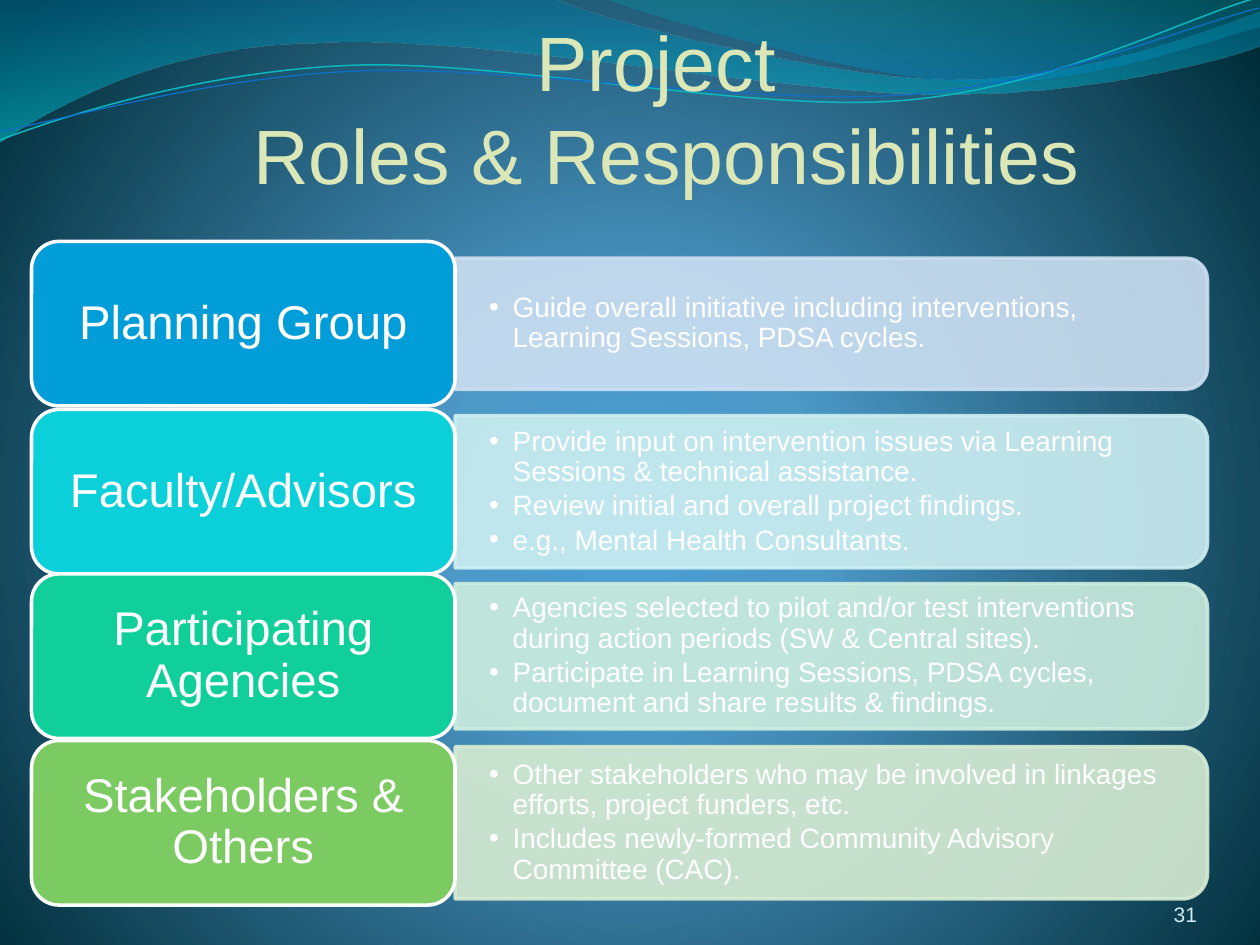
"""Build the project roles and responsibilities slide."""
from math import cos, radians, sin

from pptx import Presentation
from pptx.dml.color import RGBColor
from pptx.enum.shapes import MSO_SHAPE
from pptx.enum.text import MSO_ANCHOR, PP_ALIGN
from pptx.oxml import parse_xml
from pptx.oxml.ns import nsdecls, qn
from pptx.util import Pt

WHITE = RGBColor(0xFF, 0xFF, 0xFF)
CREAM = RGBColor(0xDB, 0xE7, 0xB6)
PALE = RGBColor(0xD1, 0xEA, 0xEE)
BLUE = RGBColor(0x00, 0x9D, 0xD9)
CYAN = RGBColor(0x0B, 0xD0, 0xD9)
GREEN = RGBColor(0x10, 0xCF, 0x9B)
LIME = RGBColor(0x7C, 0xCA, 0x62)
BLUE_TINT = RGBColor(0xCC, 0xDF, 0xF1)
CYAN_TINT = RGBColor(0xCC, 0xEE, 0xF1)
GREEN_TINT = RGBColor(0xCC, 0xED, 0xDE)
LIME_TINT = RGBColor(0xD7, 0xEC, 0xD3)
NAVY = RGBColor(0x00, 0x74, 0xA1)
AQUA = RGBColor(0x00, 0xC6, 0xCF)
TEAL = RGBColor(0x00, 0xA1, 0xA9)
AZURE = RGBColor(0x00, 0x8B, 0xBF)
LINE_AQUA = RGBColor(0x0A, 0xB8, 0xBF)
LINE_BLUE = RGBColor(0x0F, 0x6F, 0xC6)
GLOW = RGBColor(0x4A, 0xA0, 0xD6)
MID = RGBColor(0x4C, 0x98, 0xC7)
DARK = RGBColor(0x00, 0x2C, 0x38)
TILT = 2.7


def fade(shape, levels):
    """Set the opacity, in percent, of each colour in turn."""
    for color, level in zip(shape.element.iter(qn("a:srgbClr")), levels):
        alpha = color.makeelement(qn("a:alpha"), {"val": str(level * 1000)})
        color.append(alpha)


def draw(shapes, start, parts, close):
    """Draw an outline of lines (2 numbers) and cubic curves (6), in points."""
    dots = [(Pt(part[i]), Pt(part[i + 1]))
            for part in parts for i in range(0, len(part), 2)]
    pen = shapes.build_freeform(Pt(start[0]), Pt(start[1]))
    pen.add_line_segments(dots, close=close)
    shape = pen.convert_to_shape()
    shape.shadow.inherit = False
    steps = iter(list(shape.element.iter(qn("a:lnTo"))))
    for part in parts:
        first = next(steps)
        if len(part) == 6:
            first.tag = qn("a:cubicBezTo")
            for step in (next(steps), next(steps)):
                first.append(step[0])
                step.getparent().remove(step)
    return shape


deck = Presentation()
deck.slide_width, deck.slide_height = Pt(720), Pt(540)
slide = deck.slides.add_slide(deck.slide_layouts[5])
shapes = slide.shapes

slide.background.fill.gradient()
old = next(slide.element.iter(qn("a:gradFill")))
stops = "".join(
    f'<a:gs pos="{pos * 1000}"><a:srgbClr val="{color}"/></a:gs>'
    for pos, color in [(0, GLOW), (25, MID), (100, DARK)])
old.getparent().replace(old, parse_xml(
    f'<a:gradFill {nsdecls("a")} rotWithShape="1"><a:gsLst>{stops}</a:gsLst>'
    '<a:path path="circle"><a:fillToRect l="10000" t="110000" r="10000" '
    'b="100000"/></a:path></a:gradFill>'))

waves = [
    ((0, -0.7), [(316.8, -0.7), (342.7, 12.2, 478.1, 45.4, 545.8, 45.4),
                 (614.2, 45.4, 689.8, 18.7, 720, 6.5), (720.7, 25.9),
                 (707.8, 31.7, 626.4, 54.7, 537.1, 54),
                 (447.8, 54, 275, 20.2, 185, 24.5),
                 (92.9, 25.2, 33.1, 59.8, -0.7, 81.4)],
     [(0, NAVY), (1, AQUA)], (45, 55)),
    ((344.9, -0.7), [(366.5, 7.9, 491, 44.6, 553.7, 46.8),
                     (616.3, 49.7, 691.9, 23, 720, 15.1), (720, 0)],
     [(0, TEAL), (0.8, AZURE)], (30, 45)),
]
for start, parts, tones, levels in waves:
    wave = draw(shapes, start, parts, True)
    wave.line.fill.background()
    wave.fill.gradient()
    wave.fill.gradient_angle = 270
    for stop, (pos, color) in zip(wave.fill.gradient_stops, tones):
        stop.position = pos
        stop.color.rgb = color
    fade(wave, levels)

curves = [
    ((0, 79.9), [(34.6, 67, 113.8, 41, 199.4, 37.4),
                 (284.4, 33.8, 427, 64.1, 513.4, 57.6),
                 (599.8, 51.1, 675.4, 10.8, 718.6, -1.4)], 41.4, LINE_AQUA, 0.85),
    ((0, 74.9), [(33.8, 69.1, 118.1, 43.9, 203.8, 40.3),
                 (290.2, 36.7, 429.8, 59.8, 516.2, 54),
                 (601.9, 48.2, 677.5, 15.1, 720, 4.3)], 42.5, LINE_BLUE, 0.75),
]
si, co = sin(radians(TILT)), cos(radians(TILT))
for start, parts, axis, color, width in curves:
    level = []
    for part in [start, *parts]:
        level.append([])
        for x, y in zip(part[::2], part[1::2]):
            dx, dy = x - 359.5, y - axis
            level[-1] += [359.5 + dx * co - dy * si, axis + dx * si + dy * co]
    curve = draw(shapes, level[0], level[1:], False)
    curve.left = Pt(359.5) - curve.width // 2
    curve.top = Pt(axis) - curve.height // 2
    curve.rotation = 360 - TILT
    curve.fill.background()
    curve.line.color.rgb = color
    curve.line.width = Pt(width)

title = shapes.title
title.element.getparent().append(title.element)
title.left, title.top, title.width, title.height = Pt(90), Pt(7), Pt(582), Pt(107)
title.text_frame.text = "Project \vRoles & Responsibilities"
number = shapes.add_textbox(Pt(624), Pt(500.5), Pt(60), Pt(28.8))
number.text_frame.text = "31"
for box, size, color, align in [(title, 44, CREAM, PP_ALIGN.CENTER),
                                (number, 12, PALE, PP_ALIGN.RIGHT)]:
    frame = box.text_frame
    frame.word_wrap = True
    frame.vertical_anchor = MSO_ANCHOR.BOTTOM
    frame.margin_left = frame.margin_right = 0
    frame.margin_top = frame.margin_bottom = 0
    para = frame.paragraphs[0]
    para.alignment = align
    para.font.name, para.font.size = "Arial", Pt(size)
    para.font.color.rgb = color

rows = [
    ("Planning Group", BLUE, BLUE_TINT, 185, 75,
     ["Guide overall initiative including interventions, Learning Sessions, PDSA cycles."]),
    ("Faculty/Advisors", CYAN, CYAN_TINT, 281, 87,
     ["Provide input on intervention issues via Learning Sessions & technical assistance.",
      "Review initial and overall project findings.",
      "e.g., Mental Health Consultants."]),
    ("Participating Agencies", GREEN, GREEN_TINT, 375, 83,
     ["Agencies selected to pilot and/or test interventions during action periods "
      "(SW & Central sites).",
      "Participate in Learning Sessions, PDSA cycles, document and share results & findings."]),
    ("Stakeholders & Others", LIME, LIME_TINT, 470.2, 87,
     ["Other stakeholders who may be involved in linkages efforts, project funders, etc.",
      "Includes newly-formed Community Advisory Committee (CAC)."]),
]
for name, color, tint, mid, high, items in rows:
    bar = shapes.add_shape(MSO_SHAPE.ROUND_2_SAME_RECTANGLE, Pt(475 - high / 2),
                           Pt(mid - 215), Pt(high), Pt(430))
    bar.rotation = 90
    notes = shapes.add_textbox(Pt(260), Pt(mid - high / 2 + 4), Pt(426), Pt(high - 8))
    notes.text_frame.text = "\n".join(items)
    label = shapes.add_shape(MSO_SHAPE.ROUNDED_RECTANGLE, Pt(18), Pt(mid - 47),
                             Pt(242), Pt(94))
    label.text_frame.text = name
    for shape, fill, edge in [(bar, tint, tint), (label, color, WHITE)]:
        shape.shadow.inherit = False
        shape.fill.solid()
        shape.fill.fore_color.rgb = fill
        shape.line.color.rgb = edge
        shape.line.width = Pt(2)
    fade(bar, (90, 90))

    for box, side, edge, size in [(notes, 19.5, 10, 16), (label, 12, 9, 27)]:
        frame = box.text_frame
        frame.word_wrap = True
        frame.vertical_anchor = MSO_ANCHOR.MIDDLE
        frame.margin_left = frame.margin_right = Pt(side)
        frame.margin_top = frame.margin_bottom = Pt(edge)
        for para in frame.paragraphs:
            para.line_spacing = 0.9
            para.font.name, para.font.size = "Arial", Pt(size)
            para.font.color.rgb = WHITE
    label.text_frame.paragraphs[0].alignment = PP_ALIGN.CENTER
    for para in notes.text_frame.paragraphs:
        para.space_after = Pt(2.2)
        props = para._p.get_or_add_pPr()
        props.set("marL", str(Pt(13.5)))
        props.set("indent", str(-Pt(13.5)))
        for mark in ('buFont typeface="Arial"', 'buChar char="•"'):
            props.insert_element_before(
                parse_xml(f'<a:{mark} {nsdecls("a")}/>'), "a:tabLst", "a:defRPr")

deck.save("out.pptx")
